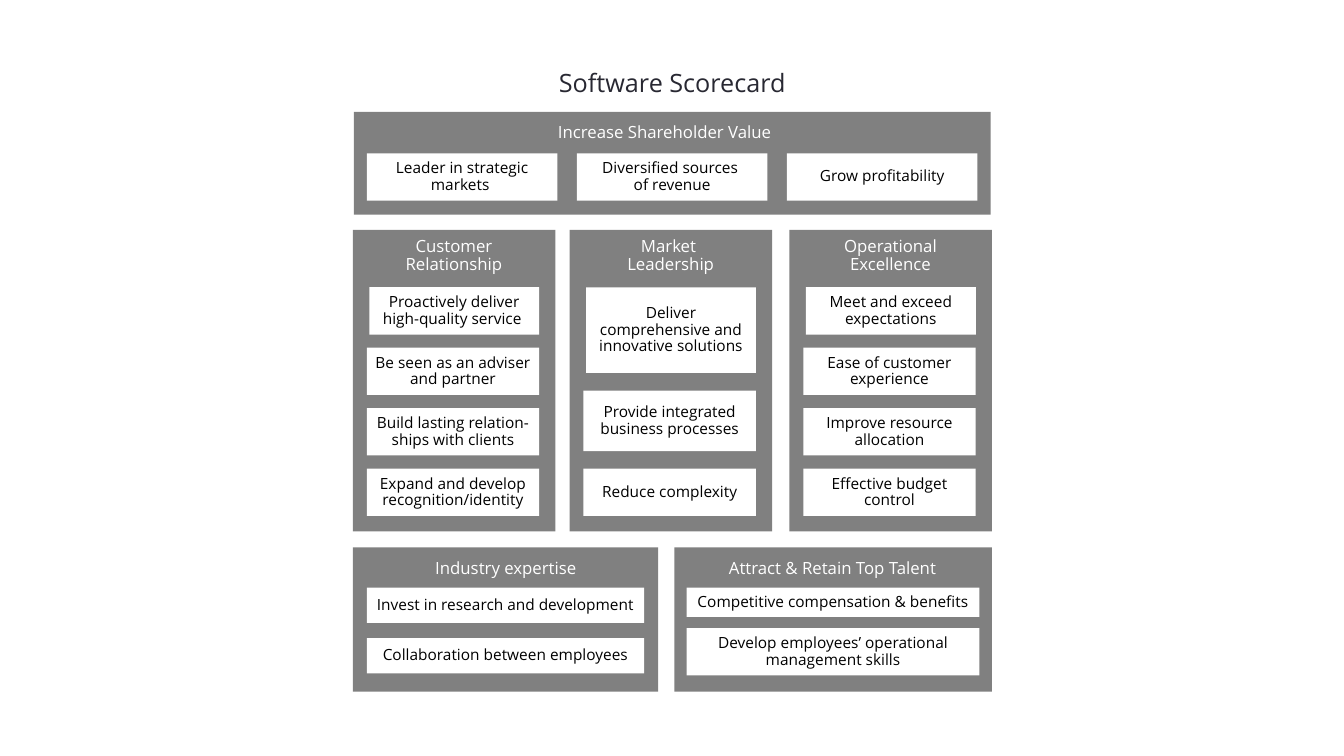
import pptx
import pptx.util
import pptx.dml.color
import pptx.enum.shapes
import pptx.enum.text

Pt = pptx.util.Pt
RGB = pptx.dml.color.RGBColor.from_string

THEME = {
    "font": "Open Sans",
    "panel": "808080",
    "card": "FFFFFF",
    "title": (18, "282832"),
    "head": (12, "FFFFFF"),
    "item": (11, "000000"),
}

FRAME = {
    "word_wrap": True,
    "vertical_anchor": pptx.enum.text.MSO_ANCHOR.MIDDLE,
    "margin_left": Pt(5),
    "margin_right": Pt(5),
    "margin_top": Pt(3.6),
    "margin_bottom": Pt(3.6),
}

PARA = {"alignment": pptx.enum.text.PP_ALIGN.CENTER, "line_spacing": 0.9}

COLS = [
    (252, "Customer Relationship", [
        (33.8, "Proactively deliver high-quality service "),
        (33.8, "Be seen as an adviser and partner"),
        (33.8, "Build lasting relation-ships with clients"),
        (33.8, "Expand and develop recognition/identity")]),
    (406.8, "Market \vLeadership", [
        (61.2, "Deliver comprehensive and innovative solutions"),
        (43.2, "Provide integrated business processes"),
        (33.8, "Reduce complexity")]),
    (563.8, "Operational Excellence", [
        (33.8, "Meet and exceed expectations"),
        (33.8, "Ease of customer experience"),
        (33.8, "Improve resource allocation"),
        (33.8, "Effective budget control")]),
]

BASES = [
    ((252, 391, 218.2, 103), 10, 10, 90, "Industry expertise", [
        (25.2, "Invest in research and development"),
        (25.2, "Collaboration between employees")]),
    ((481.7, 391, 226.8, 103), 8.8, 13.7, 91.4, "Attract & Retain Top Talent", [
        (20.9, "Competitive compensation & benefits"),
        (33.8, "Develop employees’ operational management skills")]),
]

GOALS = ["Leader in strategic markets ",
         "Diversified sources \vof revenue",
         "Grow profitability"]


def apply(obj, vals):
    """Set each named format value on an object."""
    for name, val in vals.items():
        setattr(obj, name, val)


def write(shape, text, style):
    """Put centred text of a theme style into a shape."""
    size, color = THEME[style]
    frame = shape.text_frame
    frame.text = text
    apply(frame, FRAME)
    for para in frame.paragraphs:
        apply(para, PARA)
        for run in para.runs:
            apply(run.font, {"name": THEME["font"], "size": Pt(size)})
            run.font.color.rgb = RGB(color)


def label(slide, box, text, style):
    """Add a text box."""
    write(slide.shapes.add_textbox(*map(Pt, box)), text, style)


def block(slide, box, fill, text=None):
    """Add a plain filled rectangle, with item text if given."""
    kind = pptx.enum.shapes.MSO_SHAPE.RECTANGLE
    shape = slide.shapes.add_shape(kind, *map(Pt, box))
    shape.shadow.inherit = False
    shape.fill.solid()
    shape.fill.fore_color.rgb = RGB(THEME[fill])
    shape.line.fill.background()
    if text:
        write(shape, text, "item")


def stack(slide, box, items, trim=0):
    """Spread cards down a box with equal gaps, trimming the first at left."""
    left, top, width, height = box
    gap = (height - sum(tall for tall, _ in items)) / (len(items) - 1)
    for tall, text in items:
        block(slide, (left + trim, top, width - trim, tall), "card", text)
        top += tall + gap
        trim = 0


def banner(slide, box):
    """Draw the shareholder panel with its row of goals."""
    left, top, width, _ = box
    block(slide, box, "panel")
    label(slide, (left + 133.9, top + 4.3, 176.4, 21.6),
          "Increase Shareholder Value", "head")
    for i, text in enumerate(GOALS):
        card = (left + 9.4 + i * 150, top + 29.6, 136.1, 33.8)
        block(slide, card, "card", text)


def column(slide, box, head, items):
    """Draw a middle panel with its cards."""
    left, top, width, _ = box
    block(slide, box, "panel")
    label(slide, (left + 10, top + 0.7, 124.6, 36), head, "head")
    stack(slide, (left + 10, top + 41, 123.2, 163.4), items, 1.8)


def base(slide, box, pad, shift, end, head, items):
    """Draw a bottom panel with its cards."""
    left, top, width, _ = box
    block(slide, box, "panel")
    label(slide, (left + shift, top + 5, 198.7, 21.6), head, "head")
    stack(slide, (left + pad, top + 28.8, width - 2 * pad, end - 28.8), items)


def main():
    """Build and save the scorecard."""
    deck = pptx.Presentation()
    apply(deck, {"slide_width": Pt(960), "slide_height": Pt(540)})
    slide = deck.slides.add_slide(deck.slide_layouts[6])
    label(slide, (252.7, 46.1, 455, 28.8), "Software Scorecard", "title")
    banner(slide, (252.7, 79.9, 455, 73.4))
    for left, head, items in COLS:
        column(slide, (left, 164.2, 144.7, 215.3), head, items)
    for part in BASES:
        base(slide, *part)
    deck.save("out.pptx")


if __name__ == "__main__":
    main()
